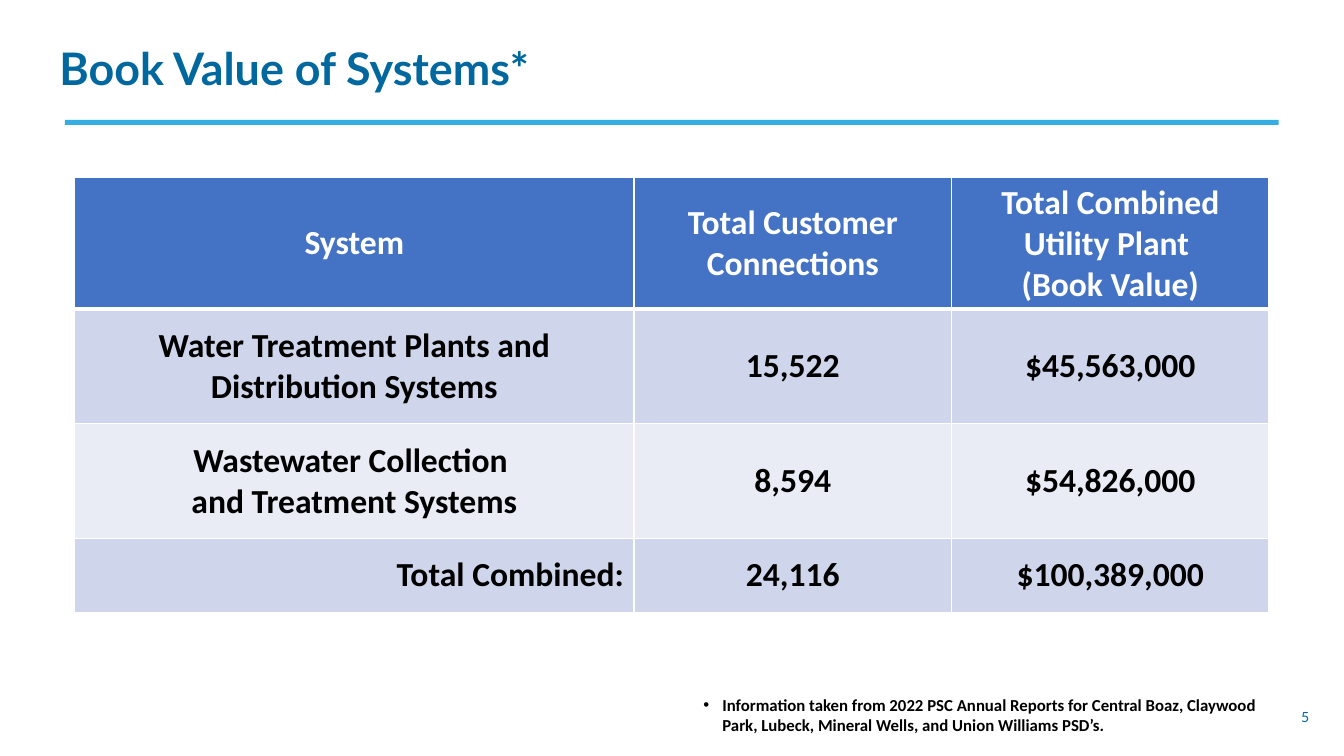
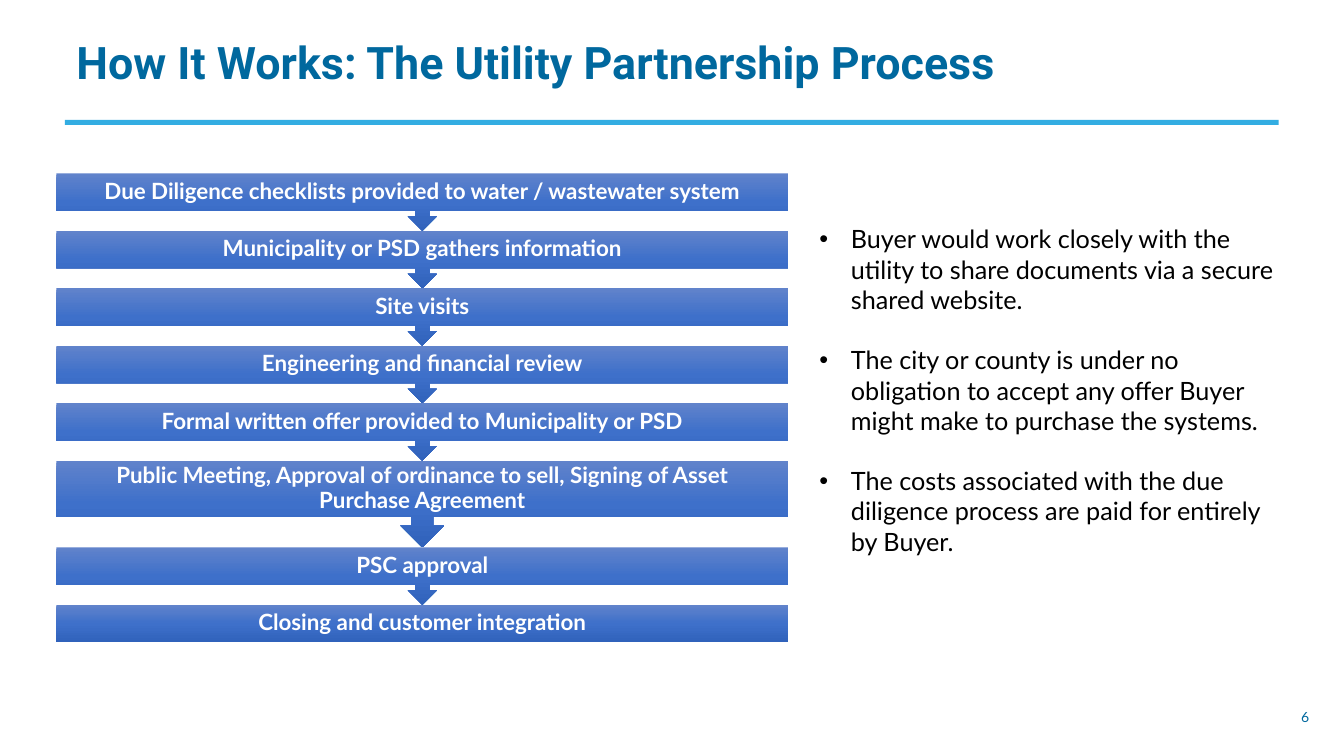
from copy import deepcopy
from dataclasses import dataclass

from lxml.etree import SubElement
from pptx import Presentation
from pptx.dml.color import RGBColor
from pptx.enum.shapes import MSO_SHAPE
from pptx.enum.text import MSO_ANCHOR, PP_ALIGN
from pptx.oxml.ns import qn
from pptx.util import Pt


@dataclass(frozen=True)
class Theme:
    heading: str = "00689E"
    rule: str = "33ADE2"
    ink: str = "000000"
    white: str = "FFFFFF"
    table_head: str = "4472C4"
    table_bands: tuple = ("CFD5EA", "E9EBF5")
    step_stops: tuple = ((0, "6183CB"), (0.5, "3E70CA"), (1, "3062BB"))
    title_size: float = 32
    table_size: float = 24
    body_size: float = 18
    step_size: float = 16
    note_size: float = 12
    number_size: float = 10


theme = Theme()


def write(frame, lines, font, size, color, bold=False, align=PP_ALIGN.LEFT,
          spacing=1.0, gap=0, indent=0):
    """Write one paragraph per line; an indent makes the lines bullets."""
    frame.word_wrap = True
    for index, line in enumerate(lines):
        para = frame.add_paragraph() if index else frame.paragraphs[0]
        para.alignment = align
        para.line_spacing = spacing
        if index and gap:
            para.space_before = Pt(gap)
        if indent:
            props = para._p.get_or_add_pPr()
            props.set("marL", str(Pt(indent)))
            props.set("indent", str(-Pt(indent)))
            SubElement(props, qn("a:buFont"), typeface="Arial")
            SubElement(props, qn("a:buChar"), char="•")
        span = para.add_run()
        span.text = line
        span.font.name = font
        span.font.size = Pt(size)
        span.font.bold = bold
        span.font.color.rgb = RGBColor.from_string(color)


def add_page(deck, title, title_box, title_font, title_spacing, number):
    """Add a page with its title, rule and page number."""
    page = deck.slides.add_slide(deck.slide_layouts[6])
    rule = page.shapes.add_shape(MSO_SHAPE.RECTANGLE, Pt(46.4), Pt(85.7), Pt(867), Pt(3.6))
    rule.shadow.inherit = False
    rule.fill.solid()
    rule.fill.fore_color.rgb = RGBColor.from_string(theme.rule)
    rule.line.fill.background()
    frame = page.shapes.add_textbox(*map(Pt, title_box)).text_frame
    frame.vertical_anchor = MSO_ANCHOR.MIDDLE
    write(frame, [title], title_font, theme.title_size, theme.heading,
          bold=True, spacing=title_spacing)
    frame = page.shapes.add_textbox(Pt(922.3), Pt(502.6), Pt(31.7), Pt(19.4)).text_frame
    write(frame, [str(number)], "Lato", theme.number_size, theme.heading)
    return page


deck = Presentation()
deck.slide_width, deck.slide_height = Pt(960), Pt(540)

# Book value page
page = add_page(deck, "Book Value of Systems*", (35.3, 29.5, 887, 42.5), "Lato", 0.9, 5)

# Table of systems
rows = [
    (["System"], ["Total Customer Connections"],
     ["Total Combined Utility Plant ", "(Book Value)"]),
    (["Water Treatment Plants and Distribution Systems"], ["15,522"], ["$45,563,000"]),
    (["Wastewater Collection ", "and Treatment Systems"], ["8,594"], ["$54,826,000"]),
    (["Total Combined:"], ["24,116"], ["$100,389,000"]),
]
widths = (399.6, 226.8, 226.8)
heights = (94, 82, 82, 52.6)
table = page.shapes.add_table(len(rows), len(widths), Pt(53.3), Pt(126.7),
                              Pt(sum(widths)), Pt(sum(heights))).table
for column, width in zip(table.columns, widths):
    column.width = Pt(width)
for r, (row, height) in enumerate(zip(rows, heights)):
    table.rows[r].height = Pt(height)
    for c, lines in enumerate(row):
        cell = table.cell(r, c)
        cell.vertical_anchor = MSO_ANCHOR.MIDDLE
        is_total_label = r == len(rows) - 1 and c == 0
        write(cell.text_frame, lines, "Calibri", theme.table_size,
              theme.ink if r else theme.white, bold=True,
              align=PP_ALIGN.RIGHT if is_total_label else PP_ALIGN.CENTER)
        # Borders go before the fill in the cell properties
        props = cell._tc.get_or_add_tcPr()
        for side in ("L", "R", "T", "B"):
            below_head = (r, side) in ((0, "B"), (1, "T"))
            border = SubElement(props, qn(f"a:ln{side}"), w=str(Pt(3 if below_head else 1)))
            SubElement(SubElement(border, qn("a:solidFill")), qn("a:srgbClr"), val=theme.white)
        cell.fill.solid()
        color = theme.table_bands[(r - 1) % 2] if r else theme.table_head
        cell.fill.fore_color.rgb = RGBColor.from_string(color)

# Source note
note = page.shapes.add_textbox(Pt(495.4), Pt(492.5), Pt(428.4), Pt(36))
write(note.text_frame,
      ["Information taken from 2022 PSC Annual Reports for Central Boaz, Claywood Park, "
       "Lubeck, Mineral Wells, and Union Williams PSD’s."],
      "Calibri", theme.note_size, theme.ink, bold=True, indent=13.5)

# Process page
page = add_page(deck, "How It Works: The Utility Partnership Process",
                (47.5, 21, 821, 46), "Roboto", 1.0, 6)

# Steps: each callout reaches down to the next one
pitch, tall_pitch, last_height = 41.05, 61.9, 26.9
steps = [
    ("Due Diligence checklists provided to water / wastewater system", pitch),
    ("Municipality or PSD gathers information", pitch),
    ("Site visits", pitch),
    ("Engineering and financial review", pitch),
    ("Formal written offer provided to Municipality or PSD", pitch),
    ("Public Meeting, Approval of ordinance to sell, Signing of Asset Purchase Agreement",
     tall_pitch),
    ("PSC approval", pitch),
    ("Closing and customer integration", last_height),
]
top = 123.8
for index, (label, height) in enumerate(steps):
    is_last = index == len(steps) - 1
    kind = MSO_SHAPE.RECTANGLE if is_last else MSO_SHAPE.DOWN_ARROW_CALLOUT
    step = page.shapes.add_shape(kind, Pt(40.3), Pt(top), Pt(522.7), Pt(height))
    step.shadow.inherit = False
    step.line.fill.background()
    step.fill.gradient()
    step.fill.gradient_angle = 270
    stop_list = step.fill._fill._gradFill.gsLst
    stop_list.append(deepcopy(stop_list[-1]))
    for stop, (position, color) in zip(step.fill.gradient_stops, theme.step_stops):
        stop.position = position
        stop.color.rgb = RGBColor.from_string(color)
    frame = step.text_frame
    frame.margin_left = frame.margin_right = Pt(8.6)
    frame.margin_top = frame.margin_bottom = 0
    frame.vertical_anchor = MSO_ANCHOR.MIDDLE
    write(frame, [label], "Lato", theme.step_size, theme.white, bold=True,
          align=PP_ALIGN.CENTER, spacing=0.9)
    top += height

# Commitments beside the steps
commitments = [
    "Buyer would work closely with the utility to share documents via a secure shared website.",
    "The city or county is under no obligation to accept any offer Buyer might make to "
    "purchase the systems.",
    "The costs associated with the due diligence process are paid for entirely by Buyer.",
]
box = page.shapes.add_textbox(Pt(578.2), Pt(156.2), Pt(342), Pt(248))
write(box.text_frame, commitments, "Lato", theme.body_size, theme.ink, gap=21.6, indent=22.5)

deck.save("out.pptx")
